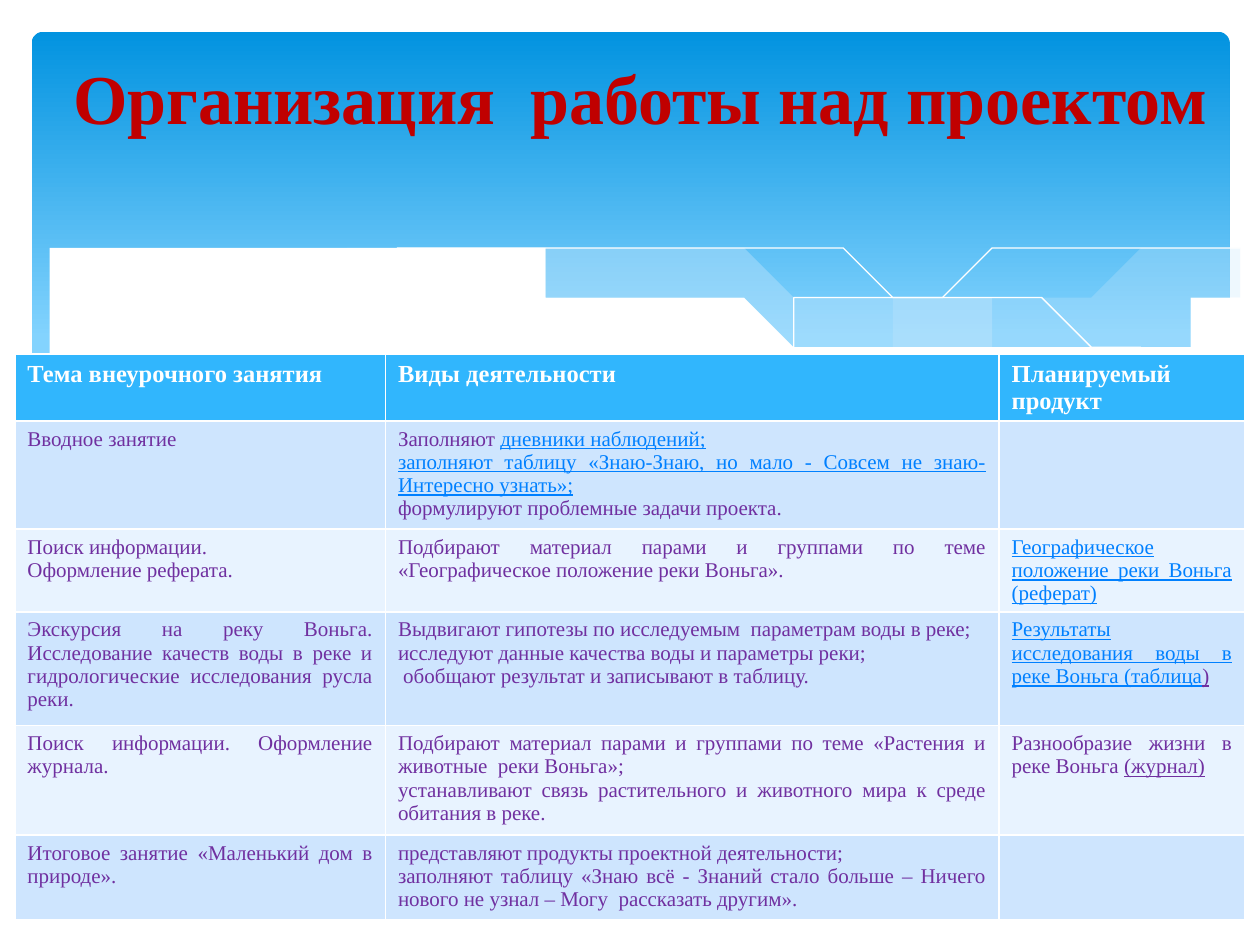
from lxml import etree
from pptx import Presentation
from pptx.dml.color import RGBColor
from pptx.enum.shapes import MSO_SHAPE
from pptx.enum.text import MSO_ANCHOR, PP_ALIGN
from pptx.oxml.ns import qn
from pptx.util import Cm, Pt

ROUNDED = MSO_SHAPE.ROUNDED_RECTANGLE
JUSTIFY, CENTER = PP_ALIGN.JUSTIFY, PP_ALIGN.CENTER
MIDDLE = MSO_ANCHOR.MIDDLE
FONT = "Times New Roman"
TITLE_ONLY_LAYOUT = 5
CURVE_STEPS = 6

COLORS = {
    "white": "FFFFFF", "sky_top": "0293E0", "sky_bottom": "83D3FE",
    "wave": "C6E7FC", "title": "C00000", "text": "7030A0", "link": "0080FF",
    "header": "31B6FD", "odd_row": "CEE5FE", "even_row": "E8F3FF",
}
# Run style: (colour, bold, underline)
STYLES = {
    "header": ("white", True, False),
    "plain": ("text", False, False),
    "underlined": ("text", False, True),
    "link": ("link", False, True),
}

TITLE = "Организация  работы над проектом"
HEADERS = ["Тема внеурочного занятия", "Виды деятельности", "Планируемый продукт"]
# A cell is a list of paragraphs; a paragraph is plain text or a list of (text, style).
ROWS = [
    [["Вводное занятие"],
     [[("Заполняют ", "plain"), ("дневники наблюдений;", "link")],
      [("заполняют таблицу «Знаю-Знаю, но мало - Совсем не знаю-Интересно узнать»;", "link")],
      "формулируют проблемные задачи проекта."],
     []],
    [["Поиск информации.", "Оформление реферата."],
     ["Подбирают материал парами и группами по теме «Географическое положение реки Воньга»."],
     [[("Географическое положение реки Воньга (реферат)", "link")]]],
    [["Экскурсия на реку Воньга. Исследование качеств воды в реке и "
      "гидрологические исследования русла реки."],
     ["Выдвигают гипотезы по исследуемым  параметрам воды в реке;",
      "исследуют данные качества воды и параметры реки;",
      " обобщают результат и записывают в таблицу."],
     [[("Результаты исследования воды в реке Воньга (таблица", "link"), (")", "underlined")]]],
    [["Поиск информации. Оформление журнала."],
     ["Подбирают материал парами и группами по теме «Растения и животные  реки Воньга»;",
      "устанавливают связь растительного и животного мира к среде обитания в реке."],
     [[("Разнообразие жизни в реке Воньга ", "plain"), ("(журнал)", "underlined")]]],
    [["Итоговое занятие «Маленький дом в природе»."],
     ["представляют продукты проектной деятельности;",
      "заполняют таблицу «Знаю всё - Знаний стало больше – Ничего нового не узнал – "
      "Могу  рассказать другим»."],
     []],
]
COLUMN_WIDTHS = [7.47, 12.37, 4.95]
ROW_HEIGHTS = [1.32, 2.18, 1.67, 2.29, 2.21, 1.7]

# Each wave is a chain of smooth curves through points in centimetres.
RIGHT_WAVE = [
    [(24.79, 5.08), (23.39, 5.33), (21.87, 5.66), (19.79, 6.15), (17.93, 6.53), (16.79, 6.73)],
    [(16.79, 6.73), (18.26, 6.91), (20.68, 7.06), (22.78, 6.86), (23.93, 6.58), (24.79, 6.27)],
]
MIDDLE_WAVE = [
    [(22.68, 6.93), (20.5, 6.6), (17.93, 6.1), (15.98, 5.64), (13.74, 5.16),
     (11.81, 4.85), (9.65, 4.7), (7.26, 4.85)],
    [(7.26, 4.85), (9.19, 5.16), (11.4, 5.64), (14.38, 6.3), (16.89, 6.76),
     (19, 7.01), (20.78, 7.06), (22.68, 6.93)],
]
FALLING_LINE = [
    [(7.85, 4.95), (8.97, 4.8), (10.57, 4.75), (12.95, 4.88), (15.44, 5.18),
     (17.65, 5.56), (20.19, 6.12), (23.04, 6.91)],
]
RISING_LINE = [[(15.57, 6.53), (17.65, 5.97), (19.71, 5.49), (22, 5.05), (24.77, 4.7)]]
FRONT_WAVE = [
    [(24.82, 6.25), (23.62, 6.65), (22.23, 6.93), (20.55, 7.04), (18.44, 6.91),
     (15.9, 6.55), (13.44, 6.07), (11.35, 5.59), (9.27, 5.13), (7.42, 4.83),
     (5.36, 4.67), (3.71, 4.7), (2.41, 4.85), (1.5, 5.05), (0.58, 5.41)],
    [(0.58, 8.36), (24.82, 8.36)],
]
# (curves, fill colour or None for a line, opacity in percent)
WAVES = [
    (RIGHT_WAVE, "wave", 29), (MIDDLE_WAVE, "wave", 40),
    (FALLING_LINE, None, 100), (RISING_LINE, None, 100),
    (FRONT_WAVE, "white", 100),
]


def rgb(name):
    return RGBColor.from_string(COLORS[name])


def smooth(points):
    """Return points along the Catmull-Rom curve through the given points."""
    padded = [points[0], *points, points[-1]]
    result = [points[0]]
    for a, b, c, d in zip(padded, padded[1:], padded[2:], padded[3:]):
        for step in range(1, CURVE_STEPS + 1):
            t = step / CURVE_STEPS
            result.append(tuple(
                (2 * q + (r - p) * t + (2 * p - 5 * q + 4 * r - s) * t ** 2
                 + (3 * q - p - 3 * r + s) * t ** 3) / 2
                for p, q, r, s in zip(a, b, c, d)))
    return result


def add_wave(slide, curves, fill, opacity):
    points = [point for curve in curves for point in smooth(curve)]
    builder = slide.shapes.build_freeform(*points[0], scale=float(Cm(1)))
    builder.add_line_segments(points[1:], close=fill is not None)
    shape = builder.convert_to_shape()
    shape.shadow.inherit = False
    if fill is None:
        shape.fill.background()
        shape.line.color.rgb = rgb("white")
        shape.line.width = Pt(0)
        return
    shape.line.fill.background()
    shape.fill.solid()
    shape.fill.fore_color.rgb = rgb(fill)
    if opacity < 100:
        color = shape.element.spPr.find(qn("a:solidFill"))[0]
        etree.SubElement(color, qn("a:alpha")).set("val", str(opacity * 1000))


def add_sky(slide):
    sky = slide.shapes.add_shape(ROUNDED, Cm(0.64), Cm(0.64), Cm(24.15), Cm(6.86))
    sky.adjustments[0] = 0.034
    sky.shadow.inherit = False
    sky.line.fill.background()
    sky.fill.gradient()
    sky.fill.gradient_angle = 270
    stops = zip(sky.fill.gradient_stops, [("sky_top", 0), ("sky_bottom", 0.9)])
    for stop, (color, position) in stops:
        stop.color.rgb = rgb(color)
        stop.position = position


def add_run(paragraph, text, size, color, bold, underline=False):
    run = paragraph.add_run()
    run.text = text
    font = run.font
    font.name, font.size, font.bold = FONT, Pt(size), bold
    font.underline = underline
    font.color.rgb = rgb(color)


def fill_cell(cell, paragraphs, background, size):
    cell.fill.solid()
    cell.fill.fore_color.rgb = rgb(background)
    for index, content in enumerate(paragraphs):
        frame = cell.text_frame
        paragraph = frame.add_paragraph() if index else frame.paragraphs[0]
        paragraph.alignment = JUSTIFY
        runs = [(content, "plain")] if isinstance(content, str) else content
        for text, style in runs:
            add_run(paragraph, text, size, *STYLES[style])


def add_schedule(slide):
    table = slide.shapes.add_table(
        len(ROW_HEIGHTS), len(COLUMN_WIDTHS), Cm(0.3), Cm(7.14),
        Cm(sum(COLUMN_WIDTHS)), Cm(sum(ROW_HEIGHTS))).table
    for column, width in zip(table.columns, COLUMN_WIDTHS):
        column.width = Cm(width)
    header_cells = [[[(text, "header")]] for text in HEADERS]
    for index, (row, cells) in enumerate(zip(table.rows, [header_cells, *ROWS])):
        row.height = Cm(ROW_HEIGHTS[index])
        band = "odd_row" if index % 2 else "even_row"
        background, size = (band, 12) if index else ("header", 14)
        for cell, paragraphs in zip(row.cells, cells):
            fill_cell(cell, paragraphs, background, size)


def place_title(slide):
    title = slide.shapes.title
    title.left, title.top, title.width, title.height = Cm(0.41), Cm(-1.47), Cm(24.99), Cm(5.21)
    frame = title.text_frame
    frame.word_wrap = True
    frame.vertical_anchor = MIDDLE
    frame.margin_top = Cm(1.75)
    paragraph = frame.paragraphs[0]
    paragraph.alignment = CENTER
    add_run(paragraph, TITLE, 40, "title", True)
    slide.shapes.element.append(title.element)  # bring to front


def main():
    presentation = Presentation()
    presentation.slide_width, presentation.slide_height = Cm(25.4), Cm(19.05)
    slide = presentation.slides.add_slide(presentation.slide_layouts[TITLE_ONLY_LAYOUT])
    add_sky(slide)
    for wave in WAVES:
        add_wave(slide, *wave)
    add_schedule(slide)
    place_title(slide)
    presentation.save("out.pptx")


if __name__ == "__main__":
    main()
